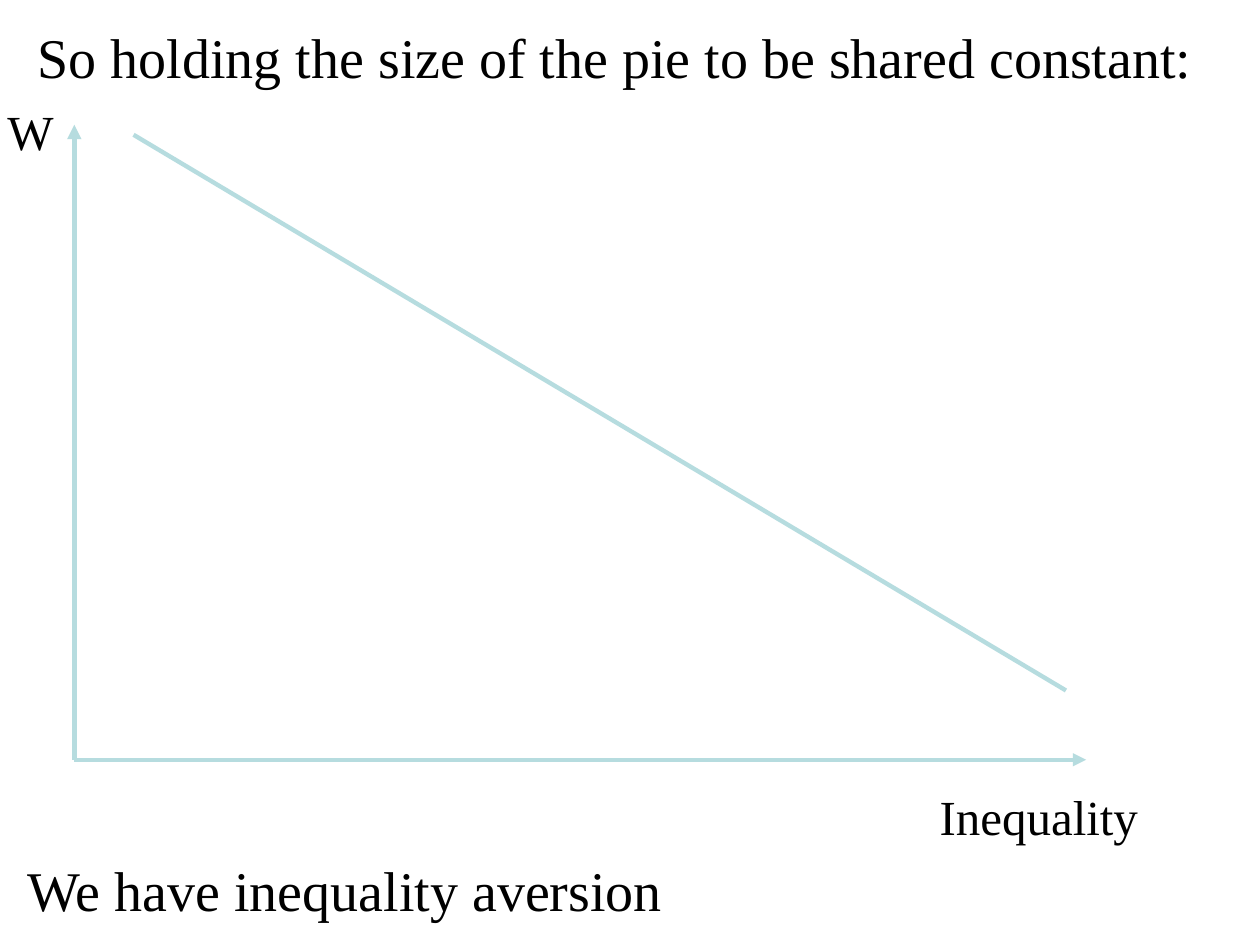
import pptx
import pptx.dml.color
import pptx.enum.shapes
import pptx.enum.text
import pptx.oxml.ns
import pptx.util
from lxml import etree
from pptx.util import Inches

BLACK = pptx.dml.color.RGBColor(0x00, 0x00, 0x00)
PALE_TEAL = pptx.dml.color.RGBColor(0xB6, 0xDC, 0xDF)
FONT = "Times New Roman"

# text, (left, top, width, height), size, wraps
TITLE = ("So holding the size of the pie to be shared constant:",
         (0.2, 0.13, 9.76, 0.64), 32, True)
LABELS = [
    ("W", (-0.04, 0.76, 0.47, 0.57), 28, False),
    ("Inequality", (7.36, 6.19, 2.2, 0.57), 28, True),
    ("We have inequality aversion", (0.12, 6.74, 9.76, 0.64), 32, True),
]

ORIGIN = (0.59, 6.03)
# start, end, width, has arrowhead
LINES = [
    (ORIGIN, (ORIGIN[0], 0.99), 2.75, True),
    (ORIGIN, (8.62, ORIGIN[1]), 2.5, True),
    ((1.06, 1.07), (8.46, 5.48), 2.5, False),
]


def write_text(box, text, place, size, wraps):
    box.left, box.top, box.width, box.height = map(Inches, place)
    frame = box.text_frame
    frame_format = {
        "text": text,
        "word_wrap": wraps,
        "auto_size": pptx.enum.text.MSO_AUTO_SIZE.SHAPE_TO_FIT_TEXT,
        "vertical_anchor": pptx.enum.text.MSO_ANCHOR.TOP,
    }
    for name, value in frame_format.items():
        setattr(frame, name, value)
    para = frame.paragraphs[0]
    para.alignment = pptx.enum.text.PP_ALIGN.LEFT
    font = para.runs[0].font
    for name, value in {"name": FONT, "size": pptx.util.Pt(size)}.items():
        setattr(font, name, value)
    font.color.rgb = BLACK


def draw_line(slide, start, end, width, has_arrowhead):
    connector = slide.shapes.add_connector(
        pptx.enum.shapes.MSO_CONNECTOR.STRAIGHT, *map(Inches, start + end))
    connector.line.color.rgb = PALE_TEAL
    connector.line.width = pptx.util.Pt(width)
    if has_arrowhead:
        etree.SubElement(connector.line._get_or_add_ln(),
                         pptx.oxml.ns.qn("a:tailEnd"), type="triangle")
    etree.SubElement(connector._element.spPr, pptx.oxml.ns.qn("a:effectLst"))


def main():
    deck = pptx.Presentation()
    deck.slide_width, deck.slide_height = Inches(10), Inches(7.5)
    slide = deck.slides.add_slide(deck.slide_layouts.get_by_name("Title Only"))
    write_text(slide.shapes.title, *TITLE)
    for line in LINES:
        draw_line(slide, *line)
    for text, place, size, wraps in LABELS:
        box = slide.shapes.add_textbox(*map(Inches, place))
        write_text(box, text, place, size, wraps)
    deck.save("out.pptx")


if __name__ == "__main__":
    main()
